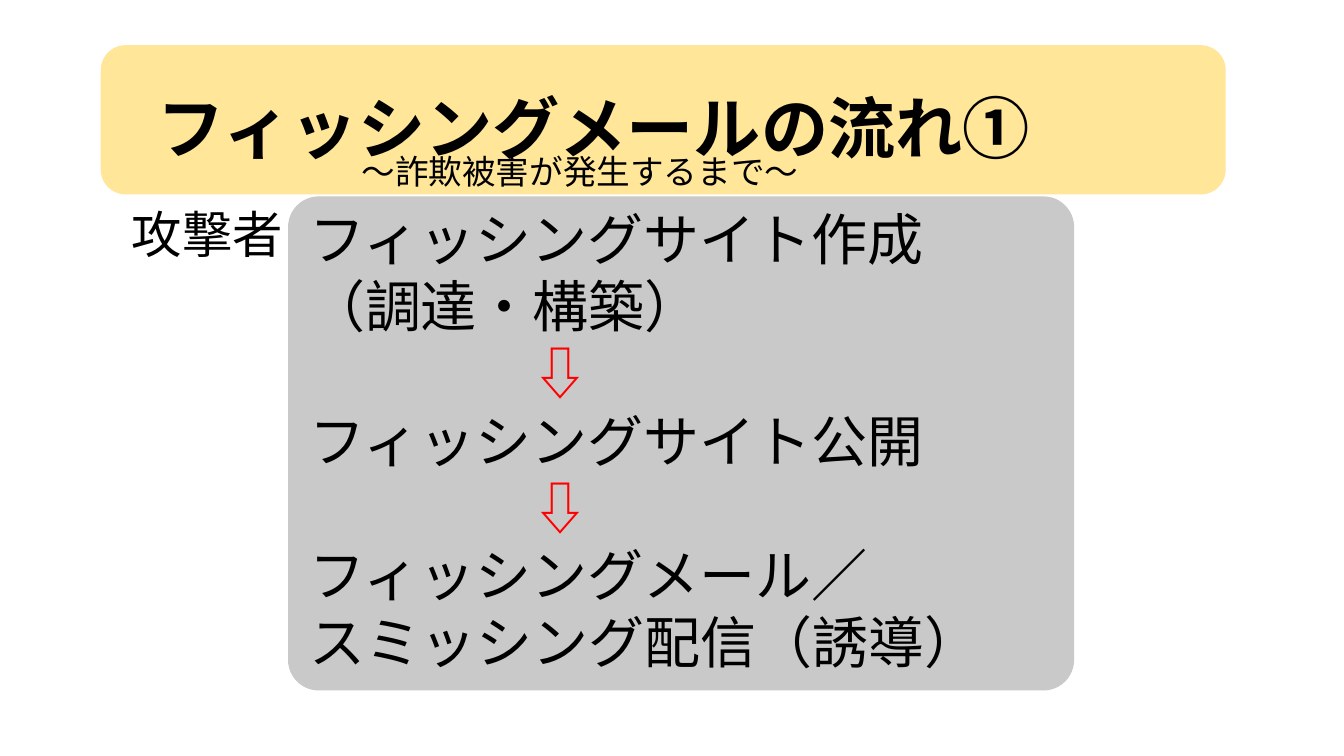
from dataclasses import dataclass

from lxml import etree
from pptx import Presentation
from pptx import util as u
from pptx.dml.color import RGBColor
from pptx.enum import shapes, text
from pptx.oxml import ns

FONT = "Noto Sans CJK JP"
COLORS = {"panel": "C9C9C9", "banner": "FFE699", "ink": "000000", "arrow": "FF0000"}
ARROW = "⇩"
ARROW_INDENT = u.Cm(5.64)


@dataclass(frozen=True)
class Box:
    left: float
    top: float
    width: float
    height: float

    def lengths(self) -> list[u.Cm]:
        return [u.Cm(value) for value in (self.left, self.top, self.width, self.height)]


@dataclass(frozen=True)
class Panel:
    box: Box
    color: str
    rounding: float


@dataclass(frozen=True)
class Label:
    box: Box
    lines: tuple[str, ...]
    size: int
    line_height: int
    bold: bool = False


FLOW_PANEL = Panel(Box(7.26, 4.95, 19.81, 12.45), "panel", 0.062)
TITLE_BANNER = Panel(Box(2.54, 1.14, 28.35, 3.76), "banner", 0.1667)

FLOW_STEPS = Label(
    Box(7.54, 5.03, 25.27, 12.22),
    (
        "フィッシングサイト作成",
        "（調達・構築）",
        ARROW,
        "フィッシングサイト公開",
        ARROW,
        "フィッシングメール／",
        "スミッシング配信（誘導）",
    ),
    40,
    48,
)
TITLE = Label(Box(3.73, 0.91, 29.77, 2.84), ("フィッシングメールの流れ①",), 48, 90, True)
ACTOR = Label(Box(3.07, 4.9, 6.12, 1.8), ("攻撃者",), 36, 46)
SUBTITLE = Label(Box(8.86, 3.63, 13.08, 1.27), ("～詐欺被害が発生するまで～",), 24, 30)


def draw_panel(slide, panel: Panel) -> None:
    shape = slide.shapes.add_shape(
        shapes.MSO_SHAPE.ROUNDED_RECTANGLE, *panel.box.lengths()
    )
    shape.adjustments[0] = panel.rounding
    shape.shadow.inherit = False
    shape.fill.solid()
    shape.fill.fore_color.rgb = RGBColor.from_string(COLORS[panel.color])
    shape.line.fill.background()


def draw_label(slide, label: Label) -> None:
    frame = slide.shapes.add_textbox(*label.box.lengths()).text_frame
    frame.word_wrap = True
    frame.auto_size = text.MSO_AUTO_SIZE.NONE
    frame.text = "\n".join(label.lines)
    for paragraph in frame.paragraphs:
        is_arrow = paragraph.text == ARROW
        if is_arrow:
            paragraph._p.get_or_add_pPr().set("marL", str(int(ARROW_INDENT)))
        paragraph.line_spacing = u.Pt(label.line_height)
        for run in paragraph.runs:
            font = run.font
            font.size = u.Pt(label.size)
            font.bold = label.bold
            font.color.rgb = RGBColor.from_string(COLORS["arrow" if is_arrow else "ink"])
            font.name = FONT
            east_asian = etree.SubElement(run._r.get_or_add_rPr(), ns.qn("a:ea"))
            east_asian.set("typeface", FONT)


def main() -> None:
    presentation = Presentation()
    presentation.slide_width = u.Cm(33.87)
    presentation.slide_height = u.Cm(19.05)
    slide = presentation.slides.add_slide(presentation.slide_layouts[6])
    draw_panel(slide, FLOW_PANEL)
    draw_label(slide, FLOW_STEPS)
    draw_panel(slide, TITLE_BANNER)
    for label in (TITLE, ACTOR, SUBTITLE):
        draw_label(slide, label)
    presentation.save("out.pptx")


if __name__ == "__main__":
    main()
